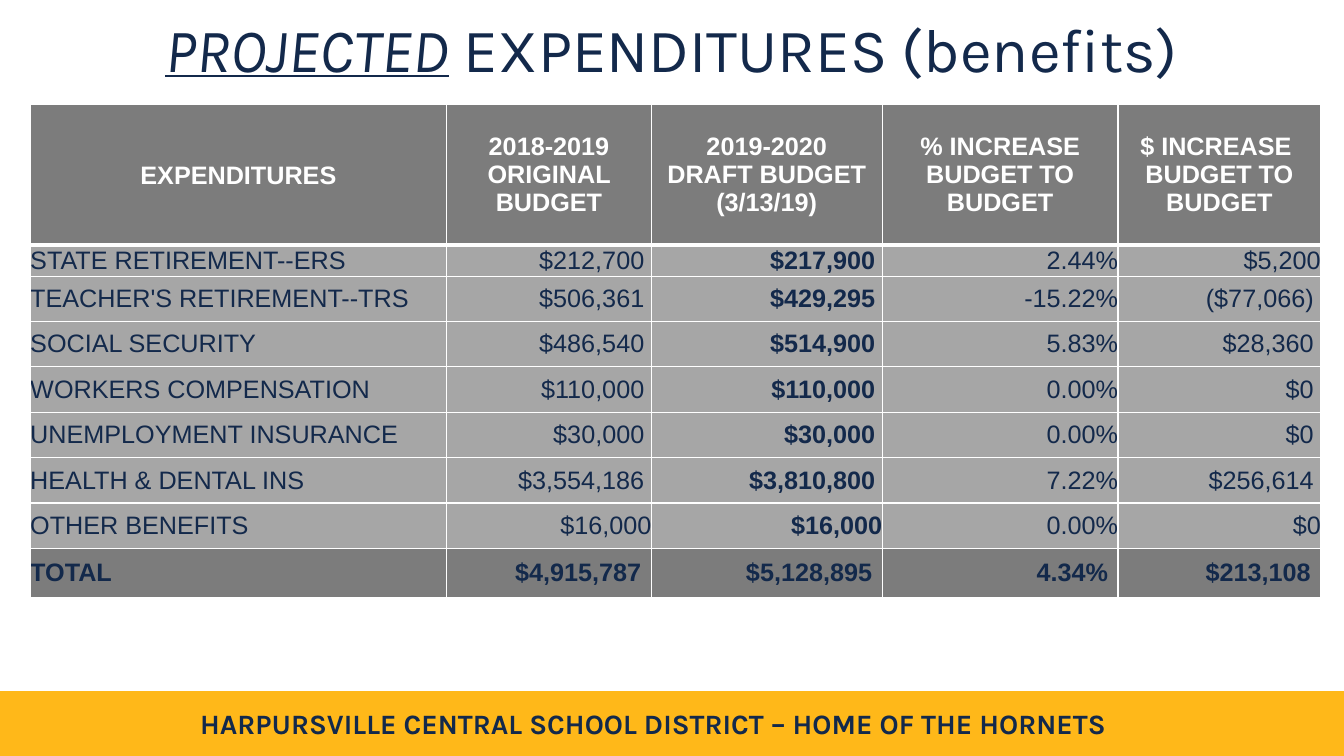
from lxml import etree
from pptx import Presentation
from pptx.dml.color import RGBColor
from pptx.enum.shapes import MSO_SHAPE
from pptx.enum.text import MSO_ANCHOR, PP_ALIGN
from pptx.oxml.ns import qn
from pptx.util import Inches, Pt

LEFT, MID, RIGHT = PP_ALIGN.LEFT, PP_ALIGN.CENTER, PP_ALIGN.RIGHT
CENTER = MSO_ANCHOR.MIDDLE
RECT = MSO_SHAPE.RECTANGLE
HUES = {"navy": "13294B", "gold": "FFB819", "white": "FFFFFF",
        "dark": "7C7C7C", "light": "A6A6A6"}
WIDE, HIGH = 13.33, 7.5
COLS = [4.13, 2.03, 2.29, 2.34, 2.01]
ROWS = [1.39, 0.31] + [0.45] * 6 + [0.49]
HEADS = ["EXPENDITURES", "2018-2019\nORIGINAL BUDGET",
         "2019-2020\nDRAFT BUDGET (3/13/19)", "% INCREASE BUDGET TO BUDGET",
         "$ INCREASE \nBUDGET TO BUDGET"]
ITEMS = [
    ["STATE RETIREMENT--ERS", "$212,700", "$217,900", "2.44%", "$5,200"],
    ["TEACHER'S RETIREMENT--TRS", "$506,361", "$429,295", "-15.22%", "($77,066)"],
    ["SOCIAL SECURITY", "$486,540", "$514,900", "5.83%", "$28,360"],
    ["WORKERS COMPENSATION", "$110,000", "$110,000", "0.00%", "$0"],
    ["UNEMPLOYMENT INSURANCE", "$30,000", "$30,000", "0.00%", "$0"],
    ["HEALTH & DENTAL INS", "$3,554,186", "$3,810,800", "7.22%", "$256,614"],
    ["OTHER BENEFITS", "$16,000", "$16,000", "0.00%", "$0"],
]
TOTAL = ["TOTAL", "$4,915,787", "$5,128,895", "4.34%", "$213,108"]


def color(name):
    return RGBColor.from_string(HUES[name])


def write(frame, text, size=18, font="Arial", hue="navy", align=LEFT, **style):
    """Fill a frame, one paragraph per line; style sets bold, italic, underline."""
    for i, line in enumerate(text.split("\n")):
        para = frame.add_paragraph() if i else frame.paragraphs[0]
        para.alignment = align
        run = para.add_run()
        run.text = line
        run.font.size, run.font.name = Pt(size), font
        run.font.color.rgb = color(hue)
        for key, value in style.items():
            setattr(run.font, key, value)


deck = Presentation()
deck.slide_width, deck.slide_height = Inches(WIDE), Inches(HIGH)
slide = deck.slides.add_slide(deck.slide_layouts[5])

# Title
title = slide.shapes.title
title.left, title.top = Inches(0.92), 0
title.width, title.height = Inches(WIDE - 2 * 0.92), Inches(1.04)
title.fill.solid()
title.fill.fore_color.rgb = color("white")
frame = title.text_frame
frame.vertical_anchor = CENTER
write(frame, "PROJECTED", 44, "Karla", align=MID, italic=True, underline=True)
write(frame, " EXPENDITURES (benefits)", 44, "Karla", align=MID)
frame.paragraphs[0].line_spacing = 0.9

# Footer band
band = slide.shapes.add_shape(RECT, 0, Inches(6.86), Inches(WIDE), Inches(0.63))
band.shadow.inherit = False
band.fill.solid()
band.fill.fore_color.rgb = band.line.color.rgb = color("gold")
band.line.width = Pt(1)
motto = slide.shapes.add_textbox(Inches(1.76), Inches(6.96), Inches(9.44), Inches(0.44))
motto.text_frame.word_wrap = True
write(motto.text_frame, "HARPURSVILLE CENTRAL SCHOOL DISTRICT – HOME OF THE HORNETS",
      20, "Karla", align=MID, bold=True)

# Budget table
table = slide.shapes.add_table(len(ROWS), len(COLS), Inches(0.3), Inches(1.04),
                               Inches(sum(COLS)), Inches(sum(ROWS))).table
table.first_row = table.horz_banding = False
for col, width in zip(table.columns, COLS):
    col.width = Inches(width)
for row, height in zip(table.rows, ROWS):
    row.height = Inches(height)

last = len(ROWS) - 1
for r, texts in enumerate([HEADS, *ITEMS, TOTAL]):
    head, total = r == 0, r == last
    for c, text in enumerate(texts):
        cell = table.cell(r, c)
        cell.vertical_anchor = CENTER
        if head and c == 0:
            cell.margin_left = cell.margin_right = cell.margin_top = Inches(0.01)
            cell.margin_bottom = 0
        elif not head and (c == 0 or not total):
            # Accounting figures stand a little off the right edge
            plain = c in (0, 3) or r == last - 1 or (r, c) == (1, 4)
            cell.margin_left = cell.margin_top = cell.margin_bottom = 0
            cell.margin_right = 0 if plain else Inches(0.07)
        props = cell._tc.get_or_add_tcPr()
        for side in "LRTB":
            thick = (head and side == "B") or (r == 1 and side == "T")
            edge = etree.SubElement(props, qn("a:ln" + side), w=str(Pt(3 if thick else 1)))
            paint = etree.SubElement(edge, qn("a:solidFill"))
            etree.SubElement(paint, qn("a:srgbClr"), val=HUES["white"])
        cell.fill.solid()
        cell.fill.fore_color.rgb = color("dark" if head or total else "light")
        write(cell.text_frame, text, hue="white" if head else "navy",
              align=MID if head else RIGHT if c else LEFT,
              bold=head or total or c == 2)

deck.save("out.pptx")
